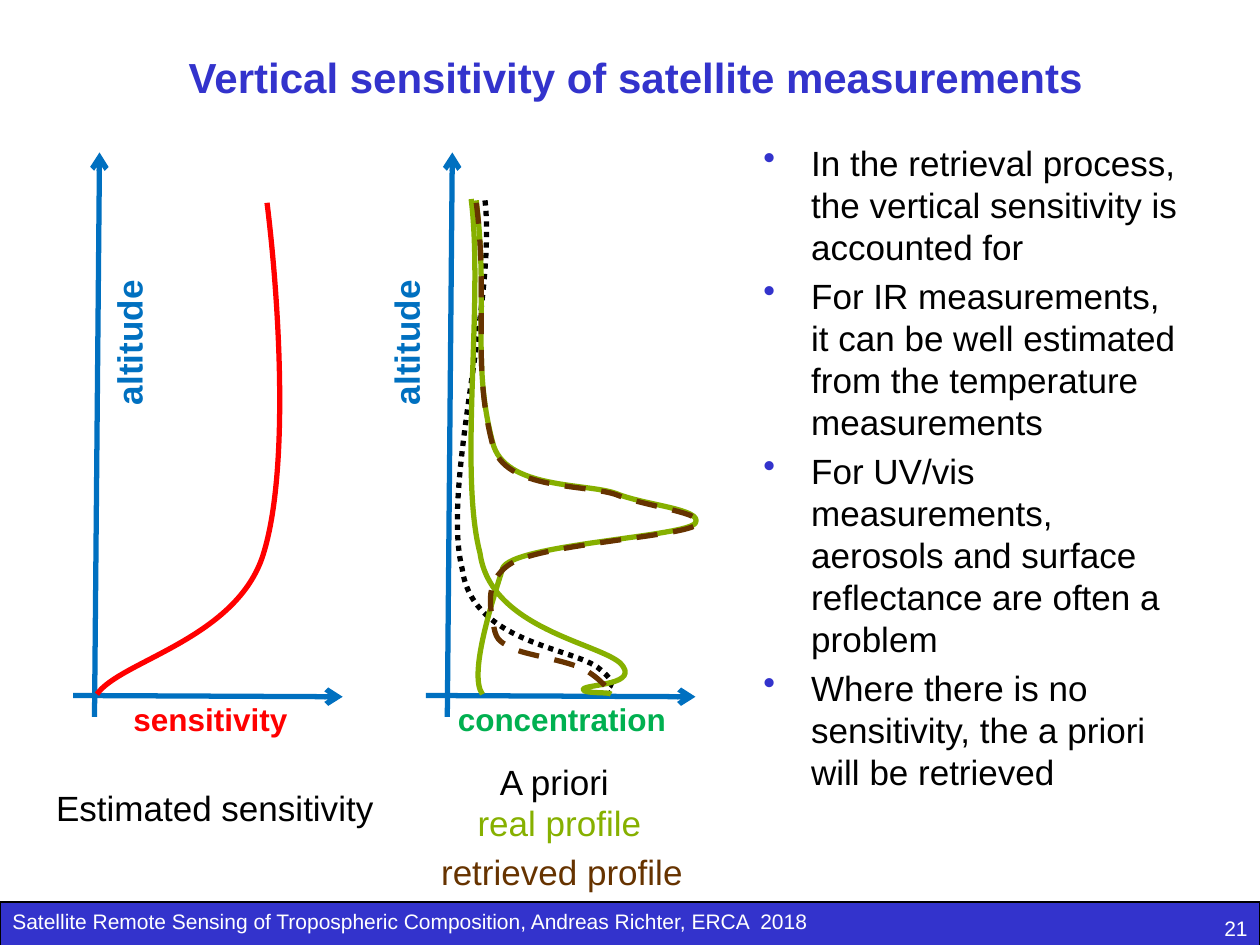
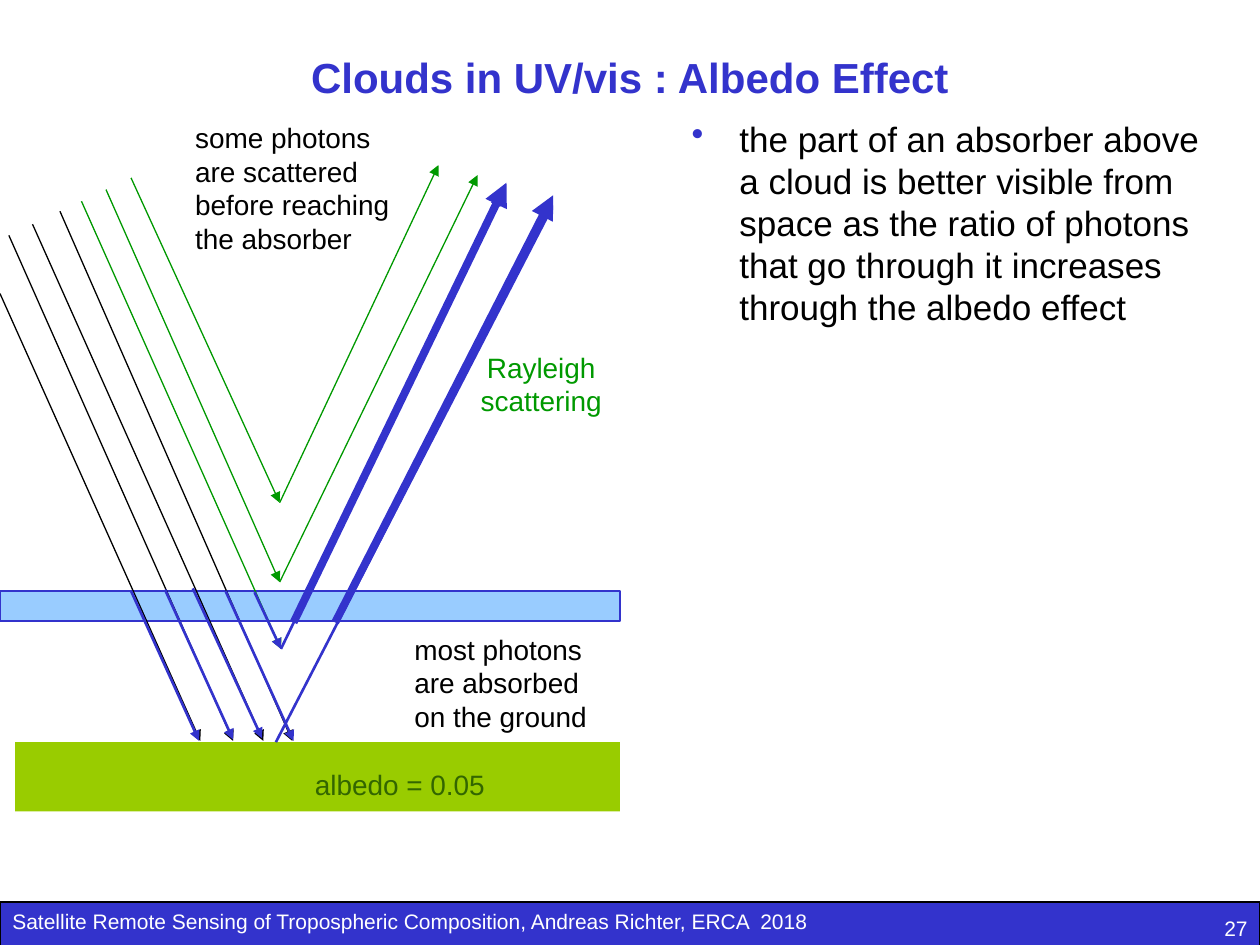
from lxml.etree import SubElement
from pptx import Presentation
from pptx.dml.color import RGBColor
from pptx.enum.dml import MSO_LINE
from pptx.enum.shapes import MSO_CONNECTOR, MSO_SHAPE
from pptx.enum.text import MSO_ANCHOR, PP_ALIGN
from pptx.oxml.ns import qn
from pptx.util import Pt

PX = 9144  # EMU per px, 100 px to the inch
FONT = "Arial"

BLACK = RGBColor(0x00, 0x00, 0x00)
WHITE = RGBColor(0xFF, 0xFF, 0xFF)
INDIGO = RGBColor(0x33, 0x33, 0xCC)
AXIS_BLUE = RGBColor(0x00, 0x70, 0xC0)
RED = RGBColor(0xFF, 0x00, 0x00)
GREEN = RGBColor(0x00, 0xB0, 0x50)
OLIVE = RGBColor(0x86, 0xB0, 0x00)
BROWN = RGBColor(0x66, 0x33, 0x00)
SKY = RGBColor(0x99, 0xCC, 0xFF)
GRASS = RGBColor(0x99, 0xCC, 0x00)
DARK_GREEN = RGBColor(0x33, 0x66, 0x00)
RAYLEIGH_GREEN = RGBColor(0x00, 0x99, 0x00)

CENTER, RIGHT = PP_ALIGN.CENTER, PP_ALIGN.RIGHT
FOOTER = "Satellite Remote Sensing of Tropospheric Composition, Andreas Richter, ERCA  2018"

SENSITIVITY = {
    "title": " Vertical sensitivity of satellite measurements",
    "number": "21",
    "body_box": (596, 107, 354, 562),
    "bullets": [
        "In the retrieval process, the vertical sensitivity is accounted for",
        "For IR measurements, it can be well estimated from the temperature measurements",
        "For UV/vis measurements, aerosols and surface reflectance are often a problem",
        "Where there is no sensitivity, the a priori will be retrieved",
    ],
}
# left edge of the axes, altitude label left, quantity, its label left, its colour
PLOTS = [
    (58, -23, "sensitivity", 50, RED),
    (338, 197, "concentration", 329, GREEN),
]
# colour, dash, start point, then Bézier triples
CURVES = [
    (RED, None, [(212, 161), (222, 242), (230, 378), (208, 443),
                 (185, 508), (95, 525), (77, 551)]),
    (BLACK, MSO_LINE.ROUND_DOT, [
        (385, 159), (394, 240), (350, 386), (367, 452), (375, 511), (457, 514),
        (476, 531), (496, 547), (476, 544), (484, 551)]),
    (OLIVE, None, [
        (374, 158), (384, 239), (364, 374), (381, 439), (389, 498), (473, 510),
        (492, 526), (510, 544), (465, 543), (463, 547), (462, 551), (485, 549),
        (485, 551)]),
    (OLIVE, None, [
        (378, 159), (388, 240), (374, 286), (391, 351), (400, 389), (467, 383),
        (490, 392), (512, 401), (558, 404), (552, 415), (546, 426), (406, 432),
        (399, 451), (393, 471), (371, 535), (383, 551)]),
    (BROWN, MSO_LINE.DASH, [
        (378, 161), (388, 241), (374, 288), (391, 353), (400, 390), (467, 384),
        (490, 393), (512, 402), (566, 408), (552, 417), (538, 426), (431, 432),
        (406, 447), (381, 462), (391, 488), (392, 498), (394, 509), (398, 510),
        (408, 515), (417, 520), (457, 525), (468, 534), (480, 542), (482, 548),
        (489, 552)]),
]
CAPTIONS = [
    ("Estimated sensitivity", (21, 619, 299, 44), BLACK),
    ("A priori", (308, 599, 264, 44), BLACK),
    ("real profile", (327, 631, 234, 44), OLIVE),
    ("retrieved profile", (329, 670, 234, 44), BROWN),
]

ALBEDO = {
    "title": "Clouds in UV/vis : Albedo Effect",
    "number": "27",
    "body_box": (539, 88, 427, 562),
    "bullets": [
        "the part of an absorber above a cloud is better visible from space as the "
        "ratio of photons that go through it increases through the albedo effect",
    ],
}
# colour, width in points, rays as (from x, from y, to x, to y)
RAYS = [
    (BLACK, 0.75, [(-4, 162, 185, 588), (12, 147, 209, 588),
                   (35, 139, 232, 588), (0, 233, 159, 588)]),
    (RAYLEIGH_GREEN, 0.75, [(72, 123, 222, 462), (222, 462, 379, 139),
                            (103, 139, 222, 399), (222, 399, 348, 131),
                            (59, 147, 223, 515)]),
    (INDIGO, 1.5, [(219, 589, 439, 163), (223, 515, 397, 155),
                   (104, 469, 158, 588), (131, 468, 185, 587),
                   (153, 467, 208, 586), (179, 469, 233, 588),
                   (202, 470, 223, 515)]),
    (INDIGO, 4.5, [(266, 494, 439, 155), (233, 494, 402, 145)]),
]
NOTES = [
    ("albedo = 0.05", (240, 604, 189, 37), DARK_GREEN, None),
    ("Rayleigh scattering", (339, 273, 181, 64), RAYLEIGH_GREEN, CENTER),
    ("some photons are scattered before reaching the absorber",
     (145, 91, 181, 117), BLACK, None),
    ("most photons are absorbed on the ground", (319, 497, 181, 90), BLACK, None),
]


def emu(lengths):
    return [round(length * PX) for length in lengths]


def format_font(para, size, color, bold=False):
    values = {"name": FONT, "size": Pt(size), "bold": bold}
    for name, value in values.items():
        setattr(para.font, name, value)
    para.font.color.rgb = color


def add_text(page, text, box, size, color, align=None, bold=False, rotation=0):
    shape = page.shapes.add_textbox(*emu(box))
    shape.rotation = rotation
    frame = shape.text_frame
    frame.word_wrap = True
    para = frame.paragraphs[0]
    para.text = text
    para.alignment = align
    format_font(para, size, color, bold)
    return frame


def add_bullets(page, bullets, box):
    frame = page.shapes.add_textbox(*emu(box)).text_frame
    frame.word_wrap = True
    for index, bullet in enumerate(bullets):
        para = frame.add_paragraph() if index else frame.paragraphs[0]
        para.text = bullet
        props = para._p.get_or_add_pPr()
        props.set("marL", str(38 * PX))
        props.set("indent", str(-38 * PX))
        SubElement(SubElement(props, qn("a:buClr")), qn("a:srgbClr")).set("val", str(INDIGO))
        SubElement(props, qn("a:buChar")).set("char", "•")
        if index:
            para.space_before = Pt(4)
        format_font(para, 20, BLACK)


def add_rect(page, box, fill, line=None):
    shape = page.shapes.add_shape(MSO_SHAPE.RECTANGLE, *emu(box))
    shape.shadow.inherit = False
    shape.fill.solid()
    shape.fill.fore_color.rgb = fill
    if line is None:
        shape.line.fill.background()
    else:
        shape.line.color.rgb = line
        shape.line.width = Pt(0.75)
    return shape


def add_arrow(page, ends, color, width, head):
    arrow = page.shapes.add_connector(MSO_CONNECTOR.STRAIGHT, *emu(ends))
    arrow.line.color.rgb = color
    arrow.line.width = Pt(width)
    SubElement(arrow.line._get_or_add_ln(), qn("a:tailEnd")).set("type", head)
    SubElement(arrow._element.spPr, qn("a:effectLst"))


def add_curve(page, points, color, dash):
    """Draw a polygon through the control points, then turn each triple into a Bézier."""
    builder = page.shapes.build_freeform(*points[0], scale=PX)
    builder.add_line_segments(points[1:], close=False)
    shape = builder.convert_to_shape()
    segments = list(shape._element.iter(qn("a:lnTo")))
    for start in range(0, len(segments), 3):
        bezier, *others = segments[start:start + 3]
        curve = SubElement(bezier.getparent(), qn("a:cubicBezTo"))
        for segment in (bezier, *others):
            curve.append(segment[0])
            segment.getparent().remove(segment)
    shape.shadow.inherit = False
    shape.fill.background()
    shape.line.color.rgb = color
    shape.line.width = Pt(3)
    if dash is not None:
        shape.line.dash_style = dash


def add_page(deck, content):
    page = deck.slides.add_slide(deck.slide_layouts[6])
    add_rect(page, (0, 716, 1000, 40), INDIGO, BLACK)
    add_text(page, FOOTER, (0, 716, 1000, 34), 12, WHITE)
    title = add_text(page, content["title"], (50, 30, 900, 62), 24, INDIGO, CENTER, True)
    title.vertical_anchor = MSO_ANCHOR.MIDDLE
    add_bullets(page, content["bullets"], content["body_box"])
    add_text(page, content["number"], (792, 722, 208, 28), 12, WHITE, RIGHT)
    return page


def draw_sensitivity(page):
    for left, altitude_left, quantity, label_left, color in PLOTS:
        add_arrow(page, (left, 552, left + 214, 553), AXIS_BLUE, 3, "arrow")
        add_arrow(page, (left + 17, 569, left + 21, 121), AXIS_BLUE, 3, "arrow")
        add_text(page, quantity, (label_left, 551, 234, 40), 18, color, CENTER, True)
        add_text(page, "altitude", (altitude_left, 250, 251, 44), 20, AXIS_BLUE,
                 CENTER, True, 270)
    for color, dash, points in CURVES:
        add_curve(page, points, color, dash)
    for text, box, color in CAPTIONS:
        add_text(page, text, box, 20, color, CENTER)


def draw_albedo(page):
    add_rect(page, (0, 469, 492, 24), SKY, INDIGO)
    add_rect(page, (12, 589, 480, 55), GRASS)
    for color, width, rays in RAYS:
        for ray in rays:
            add_arrow(page, ray, color, width, "triangle")
    for text, box, color, align in NOTES:
        add_text(page, text, box, 16, color, align)
    ray_start_cover = add_rect(page, (-27, 119, 159, 44), WHITE)
    ray_start_cover.rotation = 334.8


def main():
    deck = Presentation()
    deck.slide_width, deck.slide_height = emu((1000, 750))
    draw_sensitivity(add_page(deck, SENSITIVITY))
    draw_albedo(add_page(deck, ALBEDO))
    deck.save("out.pptx")


if __name__ == "__main__":
    main()
